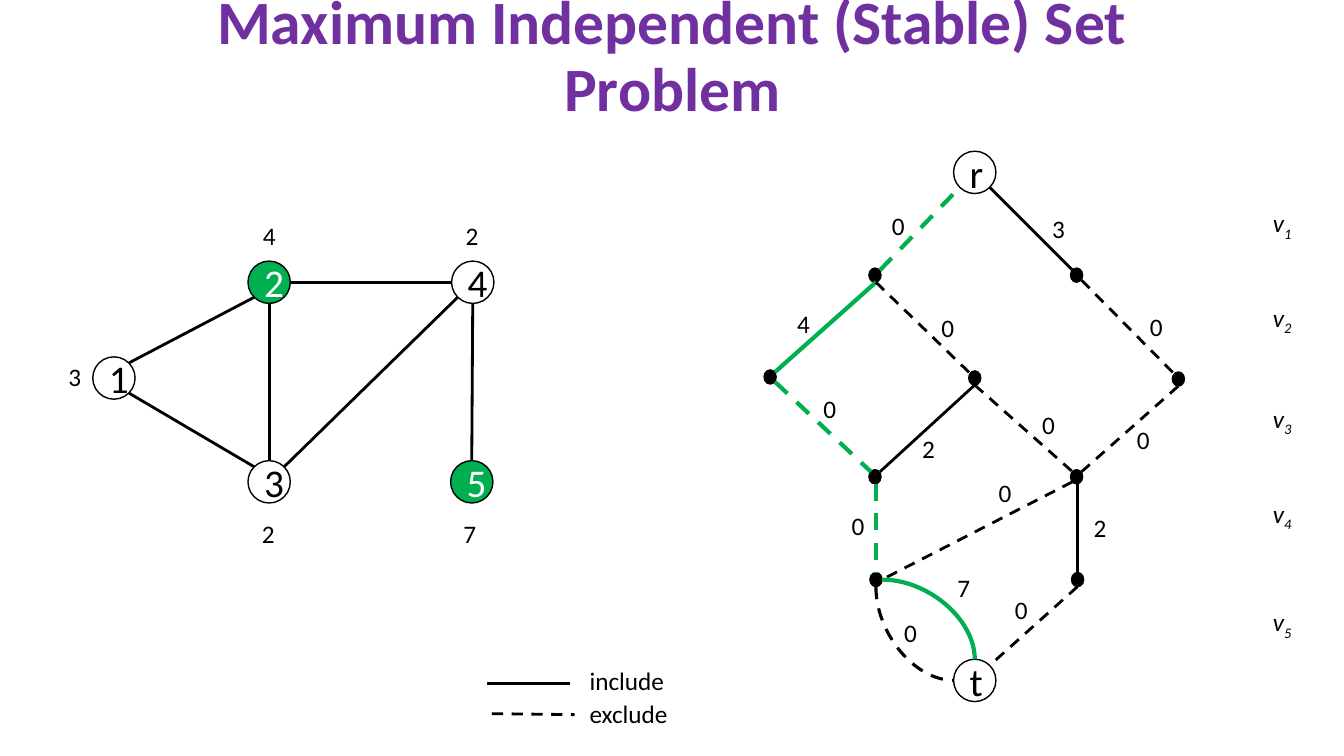
from typing import NamedTuple

from lxml.etree import SubElement
from pptx import Presentation
from pptx.dml.color import RGBColor
from pptx.enum.dml import MSO_LINE_DASH_STYLE as Dash
from pptx.enum.shapes import MSO_CONNECTOR as Connector, MSO_SHAPE as Shape
from pptx.enum.text import MSO_ANCHOR as Anchor, MSO_AUTO_SIZE as AutoSize, PP_ALIGN as Align
from pptx.oxml.ns import qn
from pptx.util import Inches, Pt

COLORS = {"title": "7030A0", "ink": "000000", "chosen": "00B050", "paper": "FFFFFF"}
FONT = "Calibri"
CELL = Inches(0.1)  # every column and row of the grid
COLUMNS, ROWS = 133.33, 75
NODE_SIZE = 4.2
DOT_WIDTH, DOT_HEIGHT = 1.2, 1.4
LABEL_WIDTH, LABEL_HEIGHT = 3.3, 4


class Node(NamedTuple):
    name: str
    column: float
    row: float
    chosen: bool = False


class Edge(NamedTuple):
    start: tuple[float, float]
    end: tuple[float, float]
    dashed: bool = False
    color: str = "ink"
    weight: float = 2


class Label(NamedTuple):
    text: str
    column: float
    row: float
    width: float = LABEL_WIDTH
    subscript: str = ""


NODES = [
    Node("1", 9.2, 35.4), Node("3", 24.6, 45.7), Node("2", 24.6, 25.9, True),
    Node("4", 44.8, 25.9), Node("5", 44.7, 45.7, True),
    Node("r", 94.6, 15), Node("t", 94.6, 65.4),
]
DOTS = [
    (86.2, 26.6), (106.2, 26.6),
    (75.8, 36.7), (96.1, 36.8), (116.3, 36.9),
    (86.2, 46.6), (106.2, 46.6),
    (86.3, 56.8), (106.3, 56.8),
]
GRAPH_EDGES = [
    Edge((25.2, 29.5), (12.8, 36)), Edge((25.2, 46.3), (12.8, 39)),
    Edge((26.7, 45.7), (26.7, 30.1)), Edge((46.8, 45.7), (46.9, 30.1)),
    Edge((28.2, 46.3), (45.4, 29.5)), Edge((28.8, 28), (44.8, 28)),
]
DIAGRAM_EDGES = [
    Edge((87.3, 26.8), (95.2, 18.6), True, "chosen", 3),
    Edge((106.4, 26.8), (98.2, 18.6)),
    Edge((76.9, 36.9), (86.9, 28), False, "chosen", 3),
    Edge((86.9, 28), (96.2, 37), True),
    Edge((107.3, 27.8), (116.5, 37.1), True),
    Edge((76.9, 37.9), (86.4, 46.8), True, "chosen", 3),
    Edge((96.7, 38.2), (87.3, 46.8)),
    Edge((96.7, 38.2), (106.4, 46.8), True),
    Edge((116.9, 38.3), (107.3, 46.8), True),
    Edge((86.9, 48), (86.9, 56.8), True, "chosen", 3),
    Edge((106.4, 47.8), (87.5, 57.5), True),
    Edge((106.9, 48), (106.9, 56.8)),
    Edge((106.9, 58.2), (98.2, 66), True),
]
LEGEND_EDGES = [Edge((56.5, 67.8), (48.3, 67.8)), Edge((48.8, 70.8), (57, 70.9), True)]
INCLUDE_ARC = Edge((87.5, 57.5), (96.7, 65.4), False, "chosen", 3)
EXCLUDE_ARC = Edge((86.9, 58.2), (94.6, 67.5), True, "ink", 2.25)

VERTEX_WEIGHTS = [
    Label("3", 5.8, 35.4), Label("4", 25.1, 21.4), Label("2", 45.2, 21.4),
    Label("2", 25, 50.9), Label("7", 45, 50.9),
]
ARC_COSTS = [
    Label("0", 87.5, 20.4), Label("3", 103.4, 20.7), Label("0", 113.1, 30.4),
    Label("0", 92.4, 30.5), Label("0", 80.7, 38.5), Label("0", 99.7, 58.5),
    Label("0", 111.8, 41.6), Label("0", 98.1, 46.9), Label("0", 83.5, 50.1),
    Label("0", 88.7, 60.8), Label("0", 102.4, 40.1), Label("4", 78.1, 30.1),
    Label("2", 90.5, 42.5), Label("2", 107.5, 50.3), Label("7", 94, 56.3),
]
LEVELS = [Label("v", 125.3, row, 4, str(number))
          for number, row in enumerate((20.1, 29.5, 39.5, 48.9, 59.7), start=1)]
LEGEND = [Label("include", 57.5, 65.5, 9.5), Label("exclude", 57.5, 68.8, 9.8)]


def grid(cells: float) -> int:
    """Turn a number of grid cells into a length."""
    return round(cells * CELL)


def rgb(name: str) -> RGBColor:
    return RGBColor.from_string(COLORS[name])


def add_run(paragraph, text: str, size: float, color: str = "ink"):
    run = paragraph.add_run()
    run.text = text
    run.font.name = FONT
    run.font.size = Pt(size)
    run.font.color.rgb = rgb(color)
    return run


def add_title(slide, text: str) -> None:
    title = slide.shapes.title
    title.left, title.top, title.width, title.height = map(grid, (9.2, 1.2, 115, 9.1))
    frame = title.text_frame
    frame.auto_size = AutoSize.NONE
    frame.vertical_anchor = Anchor.MIDDLE
    paragraph = frame.paragraphs[0]
    paragraph.alignment = Align.CENTER
    paragraph.line_spacing = 0.9
    add_run(paragraph, text, 44, "title").font.bold = True


def add_ellipse(slide, column: float, row: float, width: float, height: float, fill: str = ""):
    ellipse = slide.shapes.add_shape(Shape.OVAL, *map(grid, (column, row, width, height)))
    ellipse.shadow.inherit = False
    ellipse.line.color.rgb = rgb("ink")
    ellipse.line.width = Pt(1)
    if fill:
        ellipse.fill.solid()
        ellipse.fill.fore_color.rgb = rgb(fill)
    else:
        ellipse.fill.background()
    return ellipse


def add_node(slide, node: Node) -> None:
    circle = add_ellipse(slide, node.column, node.row, NODE_SIZE, NODE_SIZE,
                         "chosen" if node.chosen else "")
    circle.text_frame.vertical_anchor = Anchor.MIDDLE
    paragraph = circle.text_frame.paragraphs[0]
    paragraph.alignment = Align.CENTER
    add_run(paragraph, node.name, 28, "paper" if node.chosen else "ink")


def add_edge(slide, edge: Edge, kind: Connector = Connector.STRAIGHT):
    connector = slide.shapes.add_connector(kind, *map(grid, (*edge.start, *edge.end)))
    connector.line.color.rgb = rgb(edge.color)
    connector.line.width = Pt(edge.weight)
    if edge.dashed:
        connector.line.dash_style = Dash.DASH
    SubElement(connector._element.spPr, qn("a:effectLst"))
    return connector


def add_arc(slide, edge: Edge, downward: bool = False) -> None:
    """Draw a quarter bend that leaves its start sideways, or downward by a turned frame."""
    if downward:
        (left, top), (right, bottom) = edge.start, edge.end
        middle, center = (left + right) / 2, (top + bottom) / 2
        half_width, half_height = (bottom - top) / 2, (right - left) / 2
        edge = edge._replace(start=(middle + half_width, center - half_height),
                             end=(middle - half_width, center + half_height))
    properties = add_edge(slide, edge, Connector.CURVE)._element.spPr
    properties.find(qn("a:prstGeom")).set("prst", "curvedConnector2")
    if downward:
        properties.find(qn("a:xfrm")).set("rot", str(270 * 60000))


def add_label(slide, label: Label) -> None:
    box = slide.shapes.add_textbox(*map(grid, (label.column, label.row, label.width, LABEL_HEIGHT)))
    box.text_frame.word_wrap = False
    box.text_frame.auto_size = AutoSize.SHAPE_TO_FIT_TEXT
    paragraph = box.text_frame.paragraphs[0]
    run = add_run(paragraph, label.text, 18)
    if label.subscript:
        run.font.italic = True
        index = add_run(paragraph, label.subscript, 18)
        index.font.italic = True
        index.font._element.set("baseline", "-25000")


def main() -> None:
    presentation = Presentation()
    presentation.slide_width, presentation.slide_height = grid(COLUMNS), grid(ROWS)
    slide = presentation.slides.add_slide(presentation.slide_layouts.get_by_name("Title Only"))
    add_title(slide, "Maximum Independent (Stable) Set Problem")
    for node in NODES:
        add_node(slide, node)
    for column, row in DOTS:
        add_ellipse(slide, column, row, DOT_WIDTH, DOT_HEIGHT, "ink")
    for edge in GRAPH_EDGES + DIAGRAM_EDGES + LEGEND_EDGES:
        add_edge(slide, edge)
    add_arc(slide, INCLUDE_ARC)
    add_arc(slide, EXCLUDE_ARC, downward=True)
    for label in VERTEX_WEIGHTS + ARC_COSTS + LEVELS + LEGEND:
        add_label(slide, label)
    presentation.save("out.pptx")


if __name__ == "__main__":
    main()
